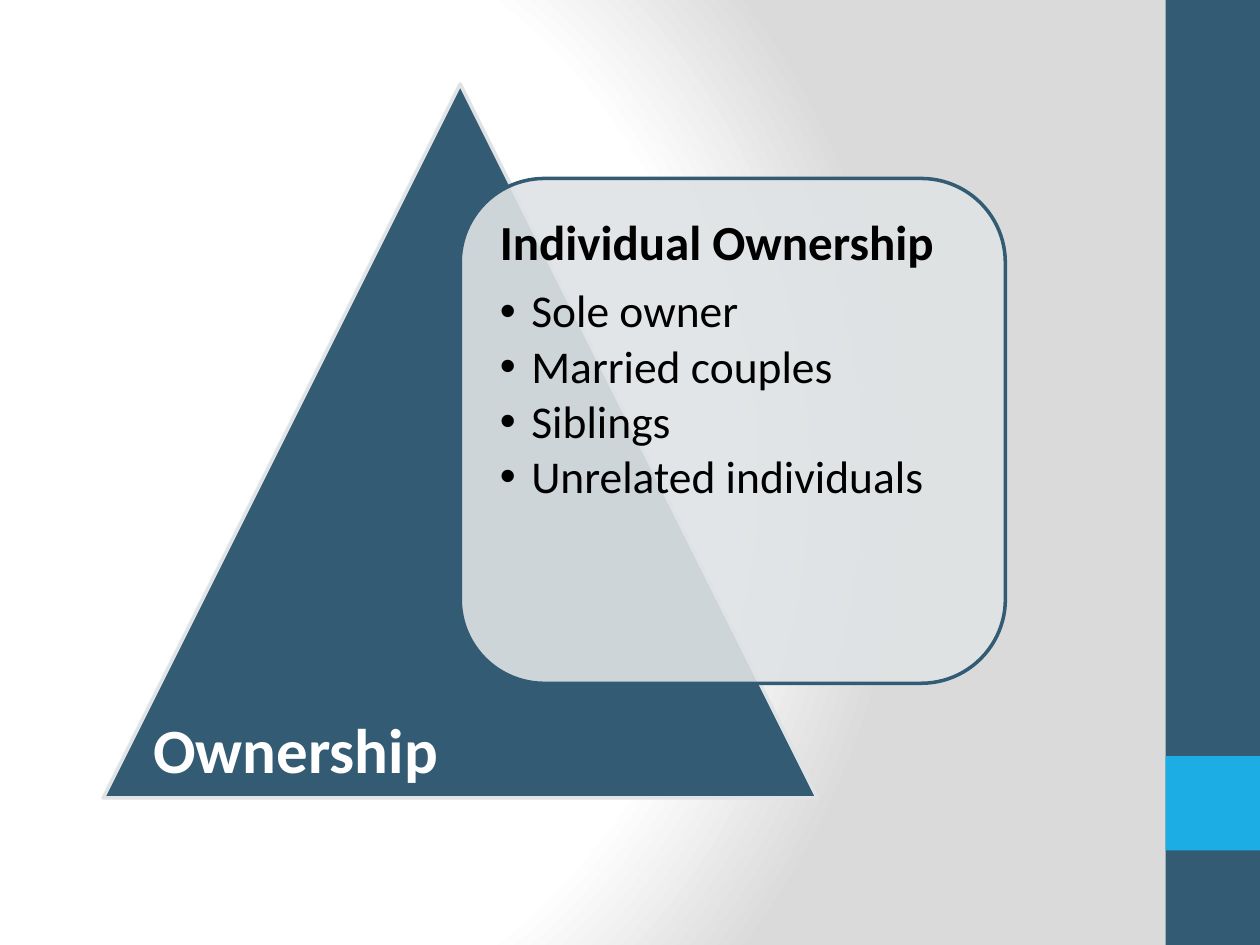
from dataclasses import dataclass

from lxml.etree import SubElement as Sub
from pptx import Presentation
from pptx.dml.color import RGBColor as RGB
from pptx.enum.shapes import MSO_SHAPE as Kind
from pptx.enum.text import MSO_AUTO_SIZE as Fit, MSO_ANCHOR as Anchor
from pptx.oxml.ns import qn
from pptx.util import Pt


@dataclass(frozen=True)
class Theme:
    font: str = "Calibri"
    navy: str = "335B74"
    blue: str = "1CADE4"
    pale: str = "DFE3E5"
    gray: str = "DADADA"
    white: str = "FFFFFF"
    black: str = "000000"
    label: int = 36
    head: int = 28
    body: int = 26
    edge: int = 2


class Deck:
    """Holds the theme and the current slide."""

    def __init__(self, theme, wide, high):
        self.theme = theme
        self.prs = Presentation()
        self.prs.slide_width, self.prs.slide_height = Pt(wide), Pt(high)
        self.slide = self.prs.slides.add_slide(self.prs.slide_layouts[6])

    def glow(self, stops, focus):
        """Fill the background with a circular gradient around a focus."""
        self.slide.background.fill.gradient()
        grad = self.slide.element.find(".//" + qn("a:gradFill"))
        for child in list(grad):
            grad.remove(child)
        group = Sub(grad, qn("a:gsLst"))
        for pos, color in stops:
            stop = Sub(group, qn("a:gs"), pos=str(pos * 1000))
            Sub(stop, qn("a:srgbClr"), val=color)
        path = Sub(grad, qn("a:path"), path="circle")
        sides = {side: str(part * 1000) for side, part in zip("ltrb", focus)}
        Sub(path, qn("a:fillToRect"), **sides)

    def shape(self, kind, box, fill, line=None, alpha=None):
        item = self.slide.shapes.add_shape(kind, *map(Pt, box))
        item.shadow.inherit = False
        item.fill.solid()
        item.fill.fore_color.rgb = RGB.from_string(fill)
        if alpha:
            color = item.element.spPr.find(".//" + qn("a:srgbClr"))
            Sub(color, qn("a:alpha"), val=str(alpha * 1000))
        if line:
            item.line.color.rgb = RGB.from_string(line)
            item.line.width = Pt(self.theme.edge)
        else:
            item.line.fill.background()

    def frame(self, box, inset=None):
        text = self.slide.shapes.add_textbox(*map(Pt, box)).text_frame
        text.word_wrap = True
        text.vertical_anchor = Anchor.TOP
        if inset is not None:
            text.margin_left = text.margin_right = Pt(inset)
            text.margin_top = text.margin_bottom = Pt(inset)
        return text

    def style(self, para, size, color, bold=False):
        font = para.font
        font.name, font.size, font.bold = self.theme.font, Pt(size), bold
        font.color.rgb = RGB.from_string(color)

    def label(self, box, words):
        text = self.frame(box)
        text.auto_size = Fit.SHAPE_TO_FIT_TEXT
        text.text = words
        self.style(text.paragraphs[0], self.theme.label, self.theme.white, True)

    def points(self, box, title, items):
        """Write a bold title with a bullet list under it."""
        look = self.theme
        text = self.frame(box, inset=8.64)
        head = text.paragraphs[0]
        head.text = title
        head.line_spacing, head.space_after = 0.9, Pt(10)
        self.style(head, look.head, look.black, True)
        for item in items:
            para = text.add_paragraph()
            para.text = item
            para.level = 1
            para.line_spacing, para.space_after = 0.9, Pt(3.5)
            props = para._p.get_or_add_pPr()
            props.set("marL", str(Pt(18)))
            props.set("indent", str(Pt(-18)))
            Sub(props, qn("a:buFont"), typeface="Arial")
            Sub(props, qn("a:buChar"), char="•")
            self.style(para, look.body, look.black)


def main():
    look = Theme()
    deck = Deck(look, 720, 540)
    deck.glow([(0, look.white), (75, look.white), (100, look.gray)],
              focus=(20, 50, 100, 50))
    deck.shape(Kind.RECTANGLE, (666, 0, 54, 540), look.navy)
    deck.shape(Kind.RECTANGLE, (666, 432, 54, 54), look.blue)
    deck.shape(Kind.ISOSCELES_TRIANGLE, (59, 48, 408, 408), look.navy, look.pale)
    deck.shape(Kind.ROUNDED_RECTANGLE, (263, 102, 311.5, 288.5), look.pale,
               look.navy, alpha=90)
    deck.points((277, 116, 283, 260), "Individual Ownership",
                ["Sole owner", "Married couples", "Siblings",
                 "Unrelated individuals"])
    deck.label((80.5, 402.5, 222, 51), "Ownership")
    deck.prs.save("out.pptx")


if __name__ == "__main__":
    main()
